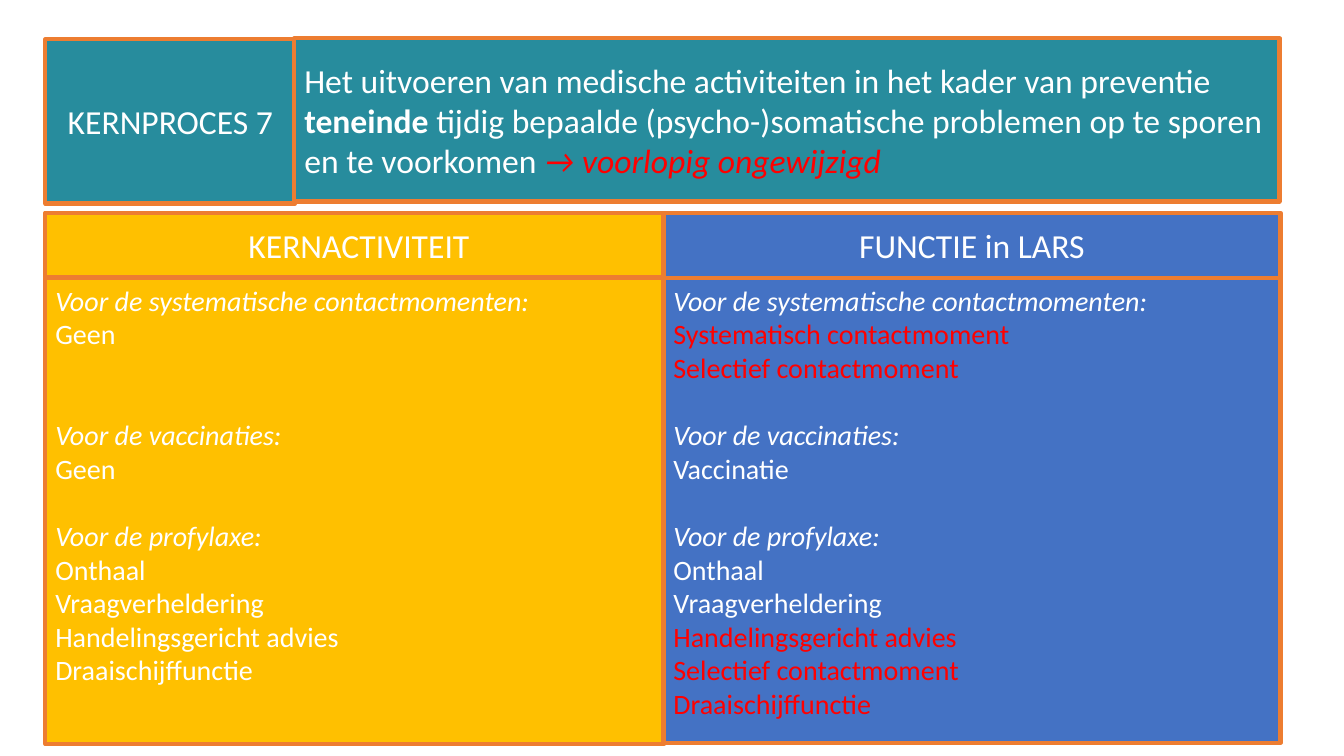
from dataclasses import dataclass

from pptx import Presentation
from pptx.dml.color import RGBColor
from pptx.enum.shapes import MSO_SHAPE
from pptx.enum.text import MSO_ANCHOR, MSO_AUTO_SIZE, PP_ALIGN
from pptx.shapes.autoshape import Shape
from pptx.slide import Slide
from pptx.util import Emu, Pt

PX = 9144  # EMU per px, 100 px to the inch


@dataclass(frozen=True)
class Theme:
    teal: str = "278C9D"
    amber: str = "FFC000"
    blue: str = "4472C4"
    border: str = "ED7D31"
    white: str = "FFFFFF"
    red: str = "FF0000"
    font: str = "Calibri"
    heading: int = 24
    body: int = 20
    body_line: int = 24
    border_width: int = 3


THEME = Theme()


@dataclass(frozen=True)
class Run:
    text: str
    color: str = THEME.white
    bold: bool = False
    italic: bool = False


@dataclass(frozen=True)
class Para:
    runs: tuple[Run, ...]
    lines_before: int = 0


@dataclass(frozen=True)
class Box:
    left: int
    top: int
    width: int
    height: int
    fill: str
    paras: tuple[Para, ...]
    size: int = THEME.heading
    align: PP_ALIGN = PP_ALIGN.CENTER
    anchor: MSO_ANCHOR = MSO_ANCHOR.MIDDLE


def line(text: str, color: str = THEME.white) -> Para:
    return Para((Run(text, color),))


def topic(text: str, lines_before: int = 0) -> Para:
    return Para((Run(text, italic=True),), lines_before)


def body_box(left: int, width: int, height: int, fill: str, *paras: Para) -> Box:
    return Box(left, 276, width, height, fill, paras, THEME.body,
               PP_ALIGN.LEFT, MSO_ANCHOR.TOP)


CONTACTS = "Voor de systematische contactmomenten:"
VACCINES = "Voor de vaccinaties:"
PROPHYLAXIS = "Voor de profylaxe:"

TITLE = Box(45, 39, 248, 163, THEME.teal, (line("KERNPROCES 7"),))
BOXES = (
    Box(45, 211, 622, 64, THEME.amber, (line("KERNACTIVITEIT"),)),
    Box(658, 211, 612, 65, THEME.blue, (line("FUNCTIE in LARS"),)),
    Box(292, 38, 977, 162, THEME.teal, (Para((
        Run("Het uitvoeren van medische activiteiten in het kader van preventie "),
        Run("teneinde", bold=True),
        Run(" tijdig bepaalde (psycho-)somatische problemen op te sporen en te voorkomen "),
        Run("→ voorlopig ongewijzigd", THEME.red, italic=True),
    )),), align=PP_ALIGN.LEFT),
    body_box(
        45, 614, 462, THEME.amber,
        topic(CONTACTS), line("Geen"),
        topic(VACCINES, 2), line("Geen"),
        topic(PROPHYLAXIS, 1), line("Onthaal"), line("Vraagverheldering"),
        line("Handelingsgericht advies"), line("Draaischijffunctie"),
    ),
    body_box(
        658, 612, 461, THEME.blue,
        topic(CONTACTS),
        line("Systematisch contactmoment", THEME.red),
        line("Selectief contactmoment", THEME.red),
        topic(VACCINES, 1), line("Vaccinatie"),
        topic(PROPHYLAXIS, 1), line("Onthaal"), line("Vraagverheldering"),
        line("Handelingsgericht advies", THEME.red),
        line("Selectief contactmoment", THEME.red),
        line("Draaischijffunctie", THEME.red),
    ),
)


def write_text(s: Shape, box: Box) -> None:
    tf = s.text_frame
    frame_format = {"word_wrap": True, "auto_size": MSO_AUTO_SIZE.NONE,
                    "vertical_anchor": box.anchor}
    for name, value in frame_format.items():
        setattr(tf, name, value)
    for i, para in enumerate(box.paras):
        p = tf.add_paragraph() if i else tf.paragraphs[0]
        p.alignment = box.align
        if para.lines_before:
            p.space_before = Pt(para.lines_before * THEME.body_line)
        for run in para.runs:
            r = p.add_run()
            r.text = run.text
            font_format = {"name": THEME.font, "size": Pt(box.size),
                           "bold": run.bold, "italic": run.italic}
            for name, value in font_format.items():
                setattr(r.font, name, value)
            r.font.color.rgb = RGBColor.from_string(run.color)


def format_box(s: Shape, box: Box) -> None:
    """Place, colour and fill in a shape or the title placeholder."""
    for name in ("left", "top", "width", "height"):
        setattr(s, name, Emu(getattr(box, name) * PX))
    s.shadow.inherit = False
    s.fill.solid()
    s.fill.fore_color.rgb = RGBColor.from_string(box.fill)
    s.line.color.rgb = RGBColor.from_string(THEME.border)
    s.line.width = Pt(THEME.border_width)
    write_text(s, box)


def add_box(slide: Slide, box: Box) -> None:
    format_box(slide.shapes.add_shape(MSO_SHAPE.RECTANGLE, 0, 0, 0, 0), box)


def main() -> None:
    prs = Presentation()
    prs.slide_width, prs.slide_height = Emu(1333 * PX), Emu(750 * PX)
    slide = prs.slides.add_slide(prs.slide_layouts[5])
    format_box(slide.shapes.title, TITLE)
    for box in BOXES:
        add_box(slide, box)
    prs.save("out.pptx")


if __name__ == "__main__":
    main()
